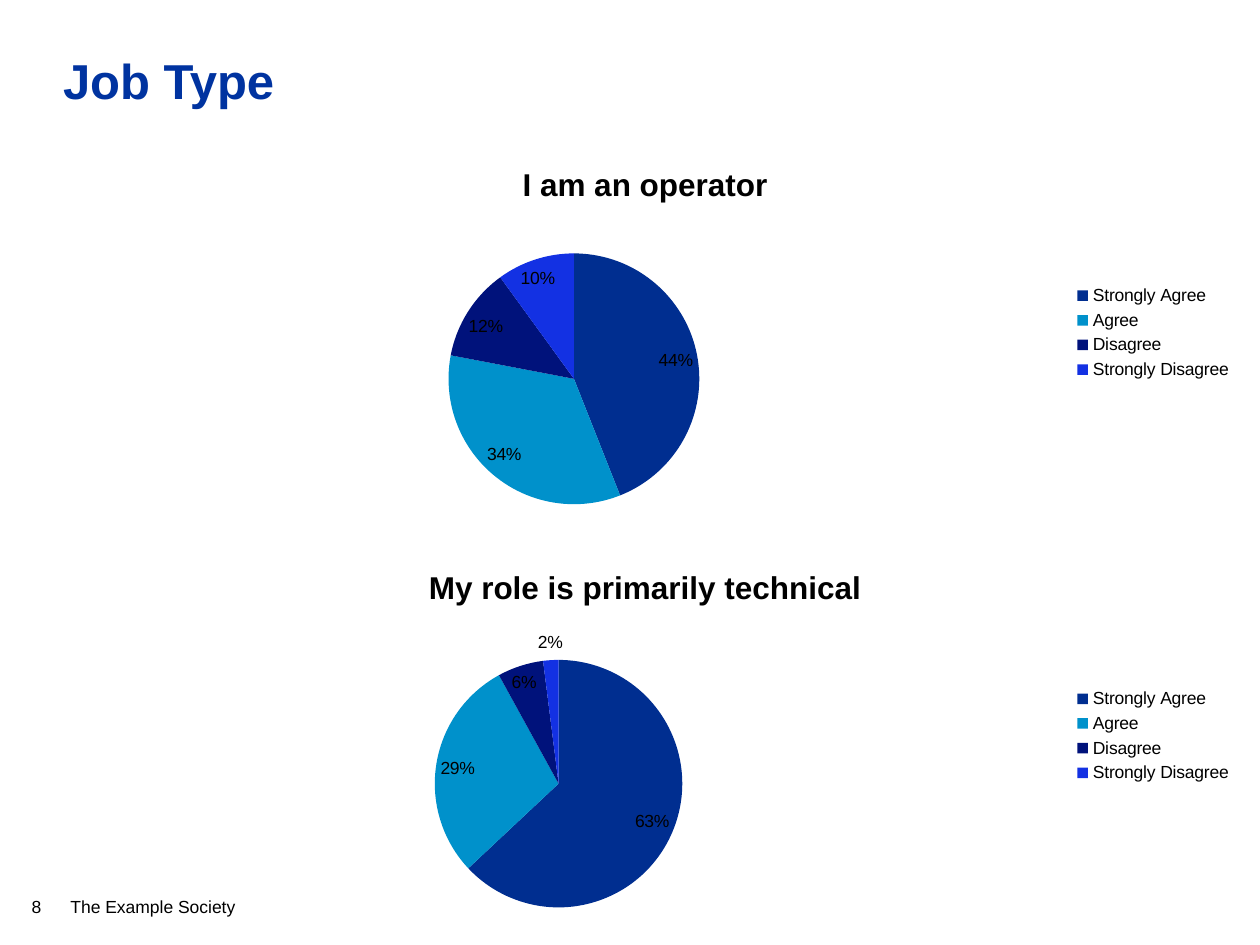
import pptx
import pptx.chart.data
import pptx.dml.color
import pptx.enum.chart
import pptx.enum.text
import pptx.util

Inches = pptx.util.Inches
RGBColor = pptx.dml.color.RGBColor

BLACK = RGBColor(0x00, 0x00, 0x00)
TITLE_BLUE = RGBColor(0x00, 0x33, 0xA0)
SLICE_COLOURS = [
    RGBColor(0x00, 0x2E, 0x90),
    RGBColor(0x00, 0x91, 0xCB),
    RGBColor(0x00, 0x12, 0x7B),
    RGBColor(0x13, 0x31, 0xE3),
]
ANSWERS = ["Strongly Agree", "Agree", "Disagree", "Strongly Disagree"]


def write(frame, text, size=10, colour=BLACK, bold=False, spacing=None):
    para = frame.paragraphs[0]
    para.alignment = pptx.enum.text.PP_ALIGN.LEFT
    para.line_spacing = spacing
    span = para.add_run()
    span.text = text
    span.font.name = "Arial"
    span.font.size = pptx.util.Pt(size)
    span.font.bold = bold
    span.font.color.rgb = colour


deck = pptx.Presentation()
deck.slide_width = Inches(10)
deck.slide_height = Inches(7.5)
page = deck.slides.add_slide(deck.slide_layouts[5])

# Title
title = page.shapes.title
title.left, title.top = Inches(0.25), Inches(0.25)
title.width, title.height = Inches(9.5), Inches(1)
frame = title.text_frame
frame.vertical_anchor = pptx.enum.text.MSO_ANCHOR.TOP
frame.margin_left = frame.margin_right = frame.margin_bottom = Inches(0.25)
frame.margin_top = Inches(0.2)
write(frame, "Job Type", size=28, colour=TITLE_BLUE, bold=True, spacing=0.9)

# Pie charts, one per question
questions = [
    ("I am an operator", [44, 34, 12, 10], 1.14),
    ("My role is primarily technical", [63, 29, 6, 2], 4.34),
]
for question, shares, top in questions:
    data = pptx.chart.data.CategoryChartData()
    data.categories = ANSWERS
    data.add_series(question, shares)
    chart = page.shapes.add_chart(
        pptx.enum.chart.XL_CHART_TYPE.PIE,
        Inches(0.36), Inches(top), Inches(9.52), Inches(3), data,
    ).chart
    chart.font.name = "Arial"
    chart.font.size = pptx.util.Pt(10)
    chart.font.color.rgb = BLACK

    chart.has_title = True
    write(chart.chart_title.text_frame, question, size=18, bold=True)
    chart.chart_title.text_frame.paragraphs[0].alignment = pptx.enum.text.PP_ALIGN.CENTER
    chart.has_legend = True
    chart.legend.position = pptx.enum.chart.XL_LEGEND_POSITION.RIGHT
    chart.legend.include_in_layout = False

    plot = chart.plots[0]
    plot.vary_by_categories = True
    for index, colour in enumerate(SLICE_COLOURS):
        fill = plot.series[0].points[index].format.fill
        fill.solid()
        fill.fore_color.rgb = colour

    plot.has_data_labels = True
    labels = plot.data_labels
    labels.show_percentage = True
    labels.show_value = False
    labels.number_format = "0%"
    labels.number_format_is_linked = False
    labels.position = pptx.enum.chart.XL_LABEL_POSITION.BEST_FIT

# Footer and page number
footers = [
    ("The Example Society", 0.31, 7.03, 2, 0.47),
    ("8", 0, 7.02, 0.68, 0.48),
]
for text, left, top, width, height in footers:
    box = page.shapes.add_textbox(Inches(left), Inches(top), Inches(width), Inches(height))
    frame = box.text_frame
    frame.word_wrap = False
    frame.vertical_anchor = pptx.enum.text.MSO_ANCHOR.BOTTOM
    frame.margin_left = frame.margin_right = Inches(0.25)
    frame.margin_top = Inches(0.05)
    frame.margin_bottom = Inches(0.22)
    write(frame, text)

deck.save("out.pptx")
